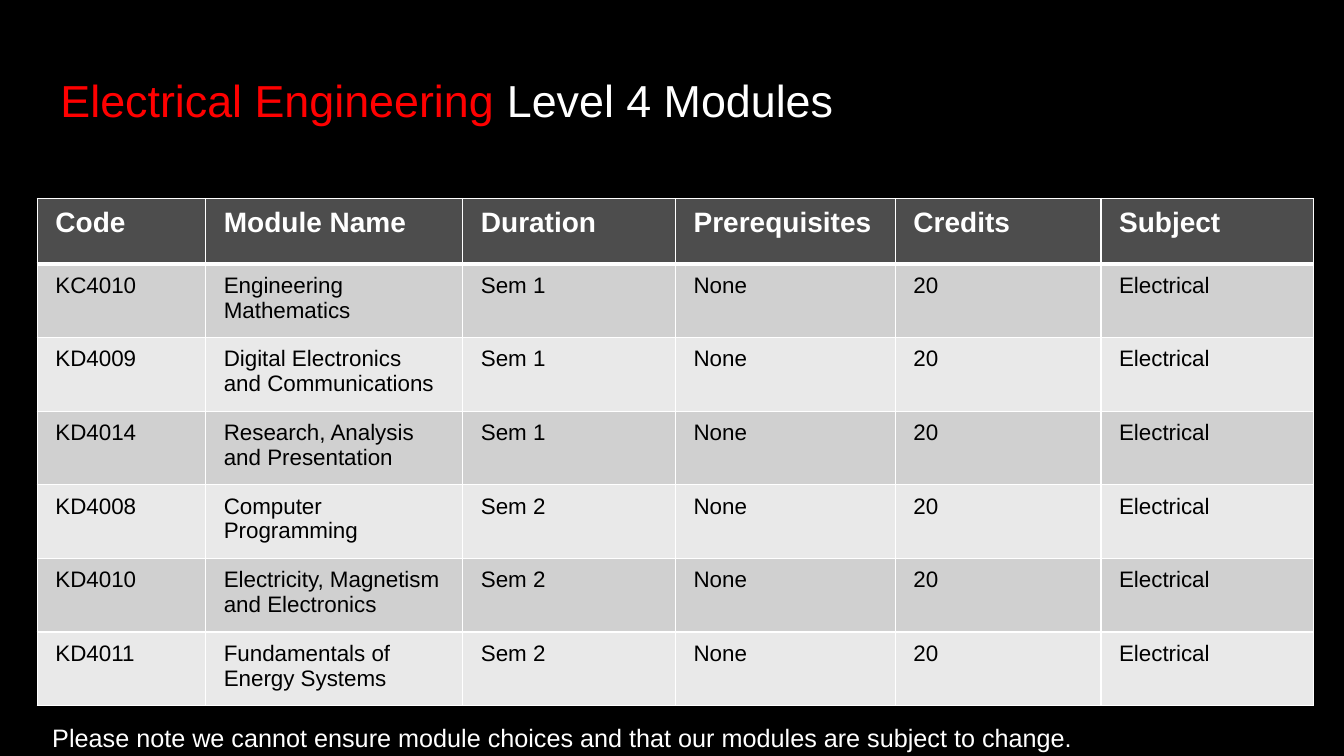
from lxml.etree import SubElement
from pptx import Presentation
from pptx.dml.color import RGBColor
from pptx.enum.text import MSO_ANCHOR, MSO_AUTO_SIZE, PP_ALIGN
from pptx.oxml.ns import qn
from pptx.util import Inches, Pt

COLORS = {
    "background": "000000",
    "accent": "FF0000",
    "light": "FFFFFF",
    "dark": "000000",
    "header": "4D4D4D",
    "odd_row": "D0D0D0",
    "even_row": "E9E9E9",
}
HEADINGS = ["Code", "Module Name", "Duration", "Prerequisites", "Credits", "Subject"]
MODULES = [
    ("KC4010", "Engineering Mathematics", "Sem 1"),
    ("KD4009", "Digital Electronics and Communications", "Sem 1"),
    ("KD4014", "Research, Analysis and Presentation", "Sem 1"),
    ("KD4008", "Computer Programming", "Sem 2"),
    ("KD4010", "Electricity, Magnetism and Electronics", "Sem 2"),
    ("KD4011", "Fundamentals of Energy Systems", "Sem 2"),
]
SHARED_VALUES = ("None", "20", "Electrical")
COLUMN_WIDTHS = [1.67, 2.55, 2.11, 2.18, 2.04, 2.11]
HEADER_HEIGHT, ROW_HEIGHT = 0.65, 0.73


def color(name):
    return RGBColor.from_string(COLORS[name])


def add_text(paragraph, text, size=16, color_name="light", bold=False):
    run = paragraph.add_run()
    run.text = text
    run.font.name = "Arial"
    run.font.size = Pt(size)
    run.font.bold = bold
    run.font.color.rgb = color(color_name)


def add_borders(cell, top=1, bottom=1):
    """Draw light cell borders with widths in points; call before filling the cell."""
    properties = cell._tc.get_or_add_tcPr()
    for tag, width in (("a:lnL", 1), ("a:lnR", 1), ("a:lnT", top), ("a:lnB", bottom)):
        line = SubElement(properties, qn(tag), w=str(Pt(width)))
        fill = SubElement(line, qn("a:solidFill"))
        SubElement(fill, qn("a:srgbClr"), val=COLORS["light"])


def format_cell(cell, text, row_index):
    is_header = row_index == 0
    add_borders(cell, top=3 if row_index == 1 else 1, bottom=3 if is_header else 1)
    cell.margin_left = cell.margin_right = Inches(0.18)
    cell.margin_top = cell.margin_bottom = Inches(0.09)
    cell.fill.solid()
    if is_header:
        cell.fill.fore_color.rgb = color("header")
        add_text(cell.text_frame.paragraphs[0], text, size=20, bold=True)
    else:
        cell.fill.fore_color.rgb = color("odd_row" if row_index % 2 else "even_row")
        add_text(cell.text_frame.paragraphs[0], text, color_name="dark")


def add_module_table(slide):
    rows = [HEADINGS] + [module + SHARED_VALUES for module in MODULES]
    heights = [HEADER_HEIGHT] + [ROW_HEIGHT] * len(MODULES)
    table = slide.shapes.add_table(
        len(rows), len(HEADINGS), Inches(0.37), Inches(1.97),
        Inches(sum(COLUMN_WIDTHS)), Inches(sum(heights)),
    ).table
    for column, width in zip(table.columns, COLUMN_WIDTHS):
        column.width = Inches(width)
    for row_index, (values, height) in enumerate(zip(rows, heights)):
        table.rows[row_index].height = Inches(height)
        for column_index, text in enumerate(values):
            format_cell(table.cell(row_index, column_index), text, row_index)


def format_title(slide):
    title = slide.shapes.title
    title.left, title.top = Inches(0.5), Inches(0.4)
    title.width, title.height = Inches(10.15), Inches(1.25)
    frame = title.text_frame
    frame.auto_size = MSO_AUTO_SIZE.NONE
    frame.vertical_anchor = MSO_ANCHOR.MIDDLE
    paragraph = frame.paragraphs[0]
    paragraph.alignment = PP_ALIGN.LEFT
    paragraph.line_spacing = 0.9
    add_text(paragraph, "Electrical Engineering", size=32, color_name="accent")
    add_text(paragraph, " Level 4 Modules", size=32)


def add_note(slide, text):
    box = slide.shapes.add_textbox(Inches(0.42), Inches(7.12), Inches(12.23), Inches(0.4))
    box.text_frame.word_wrap = True
    box.text_frame.auto_size = MSO_AUTO_SIZE.SHAPE_TO_FIT_TEXT
    add_text(box.text_frame.paragraphs[0], text, size=18)


def main():
    presentation = Presentation()
    presentation.slide_width = Inches(13.33)
    presentation.slide_height = Inches(7.5)
    slide = presentation.slides.add_slide(presentation.slide_layouts[5])
    slide.background.fill.solid()
    slide.background.fill.fore_color.rgb = color("background")
    format_title(slide)
    add_module_table(slide)
    add_note(slide, "Please note we cannot ensure module choices and that our modules "
                    "are subject to change.")
    presentation.save("out.pptx")


if __name__ == "__main__":
    main()
